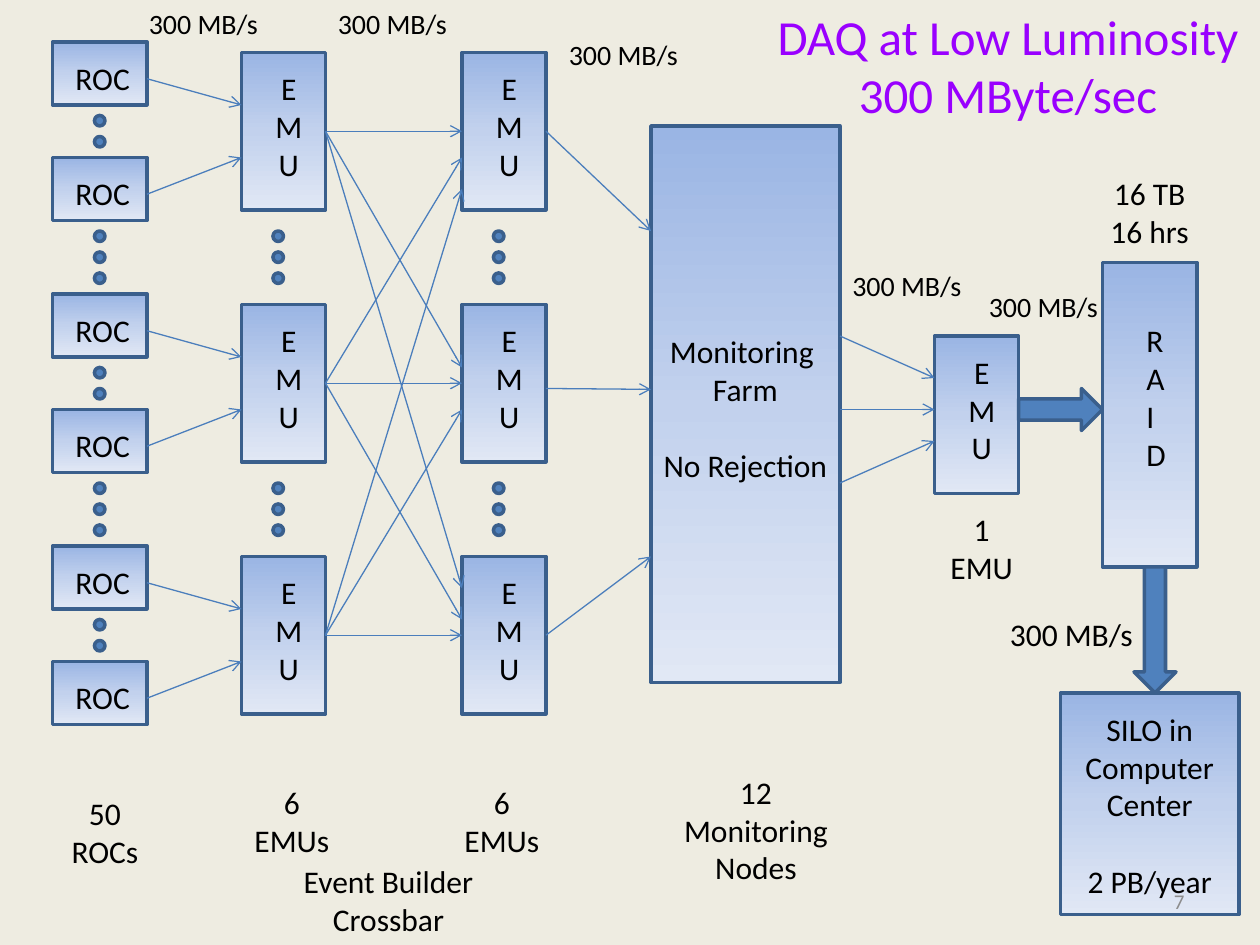
from copy import deepcopy
from dataclasses import dataclass
from typing import Optional

from lxml.etree import SubElement
from pptx import Presentation
from pptx.dml.color import RGBColor
from pptx.enum.shapes import MSO_CONNECTOR, MSO_SHAPE
from pptx.enum.text import MSO_ANCHOR, MSO_AUTO_SIZE, PP_ALIGN
from pptx.oxml.ns import qn
from pptx.shapes.autoshape import Shape
from pptx.slide import Slide
from pptx.util import Pt

HUES = {"paper": "EEECE1", "top": "9AB5E4", "mid": "C2D1ED", "low": "E1E8F5",
        "edge": "3A5F8C", "solid": "4F81BD", "wire": "4B7EBC",
        "ink": "000000", "title": "9900FF", "faint": "8C8C8C"}
FADE = ((0, "top"), (0.5, "mid"), (1, "low"))
STEP = 144
RATE = "300 MB/s"
LEFT, MID, RIGHT = PP_ALIGN.LEFT, PP_ALIGN.CENTER, PP_ALIGN.RIGHT


@dataclass
class Area:
    x: float
    y: float
    w: float
    h: float

    def spot(self) -> tuple:
        return Pt(self.x), Pt(self.y), Pt(self.w), Pt(self.h)


@dataclass
class Note:
    area: Area
    text: str
    size: float = 18
    hue: str = "ink"
    align: PP_ALIGN = MID
    wrap: bool = True
    gap: float = 0
    grow: bool = True


@dataclass
class Wire:
    x1: float
    y1: float
    x2: float
    y2: float
    src: Optional[Shape] = None
    dst: Optional[Shape] = None


def tint(name: str) -> RGBColor:
    return RGBColor.from_string(HUES[name])


def put(target: object, values: dict) -> None:
    for key, value in values.items():
        setattr(target, key, value)


def draw_shape(slide: Slide, kind: MSO_SHAPE, area: Area) -> Shape:
    shape = slide.shapes.add_shape(kind, *area.spot())
    shape.shadow.inherit = False
    shape.fill.solid()
    shape.fill.fore_color.rgb = tint("solid")
    shape.line.color.rgb = tint("edge")
    shape.line.width = Pt(2)
    return shape


def draw_note(slide: Slide, note: Note) -> None:
    frame = slide.shapes.add_textbox(*note.area.spot()).text_frame
    frame.text = note.text
    put(frame, {
        "word_wrap": note.wrap,
        "auto_size": MSO_AUTO_SIZE.SHAPE_TO_FIT_TEXT if note.grow else MSO_AUTO_SIZE.NONE,
        "vertical_anchor": MSO_ANCHOR.TOP if note.grow else MSO_ANCHOR.MIDDLE})
    for para in frame.paragraphs:
        para.alignment = note.align
        for run in para.runs:
            put(run.font, {"name": "Calibri", "size": Pt(note.size)})
            run.font.color.rgb = tint(note.hue)
    if note.gap:
        frame.paragraphs[-1].space_before = Pt(note.gap)


def draw_box(slide: Slide, area: Area, note: Note) -> Shape:
    box = draw_shape(slide, MSO_SHAPE.RECTANGLE, area)
    box.fill.gradient()
    box.fill.gradient_angle = 270
    stops = box._element.spPr.find(".//" + qn("a:gsLst"))
    stops.insert(1, deepcopy(stops[0]))
    for stop, (place, hue) in zip(box.fill.gradient_stops, FADE):
        stop.position = place
        stop.color.rgb = tint(hue)
    draw_note(slide, note)
    return box


def draw_roc(slide: Slide, y: float) -> None:
    draw_box(slide, Area(30, y, 54, 36),
             Note(Area(36, y + 6, 48, 28.8), "ROC", align=LEFT))


def draw_emu(slide: Slide, x: float, y: float) -> Shape:
    return draw_box(slide, Area(x, y, 48, 90),
                    Note(Area(x + 12, y + 6, 30, 72.7), "E\nMU"))


def draw_wire(slide: Slide, wire: Wire) -> None:
    line = slide.shapes.add_connector(
        MSO_CONNECTOR.STRAIGHT, Pt(wire.x1), Pt(wire.y1), Pt(wire.x2), Pt(wire.y2))
    if wire.src is not None:
        line.begin_connect(wire.src, 3)
    if wire.dst is not None:
        line.end_connect(wire.dst, 1)
    line.line.color.rgb = tint("wire")
    line.line.width = Pt(0.75)
    SubElement(line.line._get_or_add_ln(), qn("a:tailEnd"), type="arrow")
    SubElement(line._element.spPr, qn("a:effectLst"))


def draw_dots(slide: Slide, x: float, y: float, count: int) -> None:
    for i in range(count):
        draw_shape(slide, MSO_SHAPE.OVAL, Area(x, y + 12 * i, 6, 6))


def main() -> None:
    """Build the data flow slide from readout to storage."""
    deck = Presentation()
    put(deck, {"slide_width": Pt(720), "slide_height": Pt(540)})
    slide = deck.slides.add_slide(deck.slide_layouts[6])
    slide.background.fill.solid()
    slide.background.fill.fore_color.rgb = tint("paper")

    rows = [STEP * i for i in range(3)]
    for row in rows:
        for y in (24, 90):
            draw_roc(slide, row + y)
    first, second = ([draw_emu(slide, x, row + 30) for row in rows] for x in (138, 264))
    draw_box(slide, Area(372, 72, 108, 318),
             Note(Area(372, 186, 108, 116.6), "Monitoring \nFarm\nNo Rejection", gap=22))
    draw_emu(slide, 534, 192)
    draw_box(slide, Area(630, 150, 54, 174), Note(Area(648, 180, 18, 94.5), "RAID"))
    draw_box(slide, Area(606, 396, 102, 126.7),
             Note(Area(612, 402, 90, 117.6), "SILO in Computer Center\n2 PB/year", gap=22))

    wires = [Wire(84, row + a, 138, row + b)
             for row in rows for a, b in ((45, 60), (111, 90))]
    mesh = ((75, 210, 336), (90, 219, 354), (108, 234, 363))
    for i, ends in enumerate(mesh):
        for j, end in enumerate(ends):
            wires.append(Wire(186, rows[i] + 75, 264, end, first[i],
                              second[j] if i == j else None))
    wires += [Wire(312, 75, 372, 132, second[0]),
              Wire(312, 222, 372, 222.5),
              Wire(312, 363, 372, 318, second[2])]
    wires += [Wire(480, a, 534, b) for a, b in ((234, 234), (192, 216), (276, 252))]
    for wire in wires:
        draw_wire(slide, wire)

    draw_shape(slide, MSO_SHAPE.DOWN_ARROW, Area(648, 324, 24, 72))
    draw_shape(slide, MSO_SHAPE.RIGHT_ARROW, Area(582, 222, 48, 24))
    for row in rows:
        draw_dots(slide, 54, row + 66, 2)
    for row in rows[:2]:
        for x in (54, 156, 282):
            draw_dots(slide, x, row + 132, 3)

    notes = [
        Note(Area(24, 450, 72, 51), "50\nROCs"),
        Note(Area(378, 438, 108, 72.7), "12\nMonitoring\nNodes"),
        Note(Area(528, 288, 66, 51), "1\nEMU"),
        Note(Area(606, 96, 102, 51), "16 TB\n16 hrs"),
        Note(Area(144, 489, 156, 51), "Event Builder\nCrossbar"),
        Note(Area(432, 0, 288, 75), "DAQ at Low Luminosity\n300 MByte/sec", 28, "title"),
        Note(Area(570, 348, 90, 28.8), RATE, align=LEFT),
        Note(Area(516, 500.5, 168, 28.8), "7", 12, "faint", RIGHT, grow=False)]
    notes += [Note(Area(x, 444, 57.6, 51), "6\nEMUs", wrap=False) for x in (138, 258)]
    notes += [Note(Area(x, y, 78, 26.6), RATE, 16, align=LEFT)
              for x, y in ((78, 0), (186, 0), (318, 18), (480, 150), (558, 162))]
    for note in notes:
        draw_note(slide, note)
    deck.save("out.pptx")


if __name__ == "__main__":
    main()
